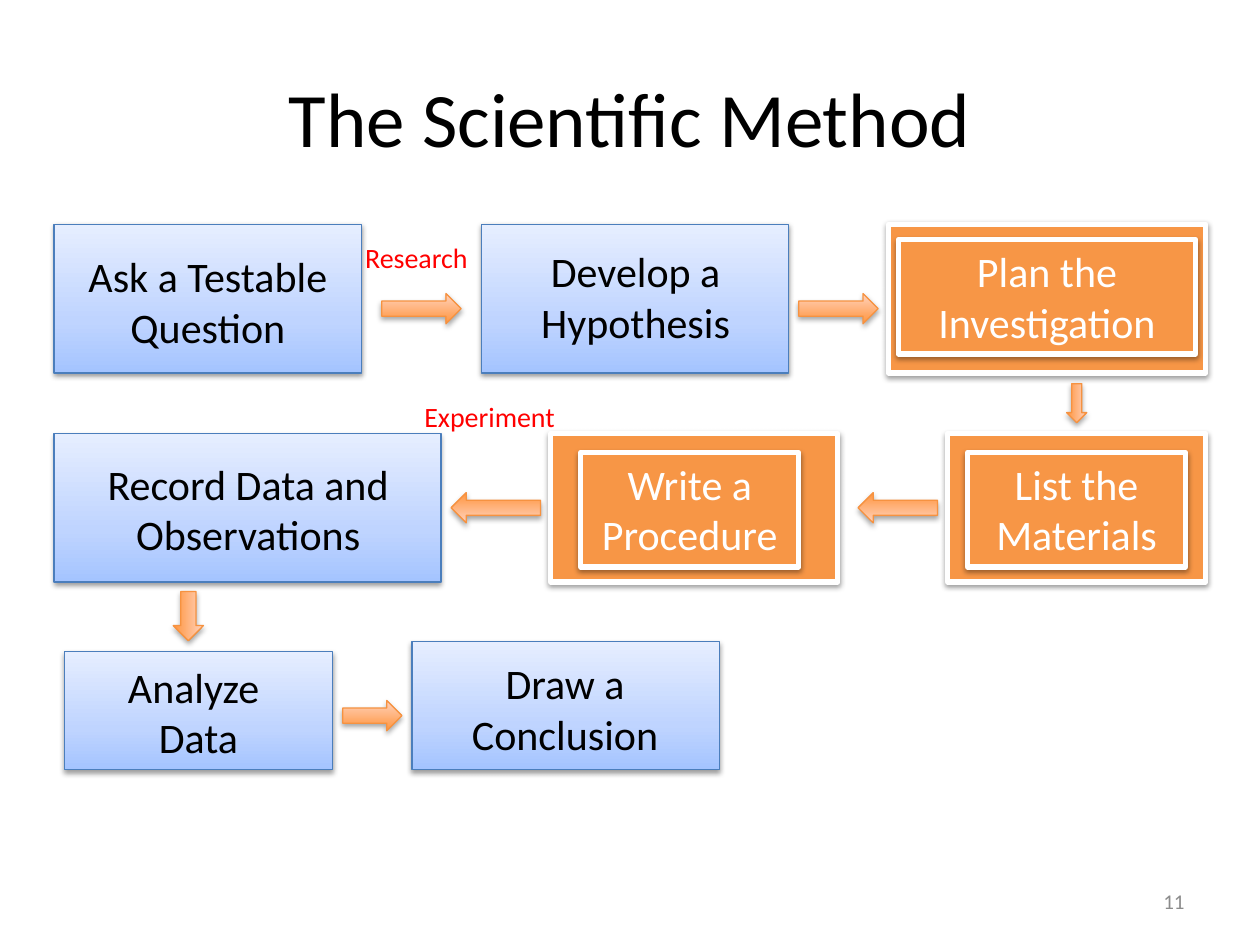
import lxml.etree
import pptx
import pptx.dml.color
import pptx.enum.shapes
import pptx.enum.text
import pptx.oxml.ns
import pptx.util

Inches = pptx.util.Inches
Pt = pptx.util.Pt
qn = pptx.oxml.ns.qn
Kind = pptx.enum.shapes.MSO_SHAPE
Align = pptx.enum.text.PP_ALIGN
Mid = pptx.enum.text.MSO_ANCHOR.MIDDLE
Top = pptx.enum.text.MSO_ANCHOR.TOP

BLUE = [(0, "A4C4FF"), (35, "BFD4FF"), (100, "E6EEFF")]
PEACH = [(0, "FF953E"), (100, "FFD2BD")]
ORANGE = "F79646"


def tint(code):
    return pptx.dml.color.RGBColor.from_string(code)


def node(root, tag, **vals):
    return lxml.etree.SubElement(root, qn(tag), {k: str(v) for k, v in vals.items()})


def style(item, form):
    for key, val in form.items():
        setattr(item, key, val)


class Deck:
    """Holds the style and the current slide, and draws each kind of element."""

    def __init__(self):
        self.show = pptx.Presentation()
        style(self.show, {"slide_width": Inches(10), "slide_height": Inches(7.5)})
        self.slide = self.show.slides.add_slide(self.show.slide_layouts[5])
        self.font = "Calibri"

    def label(self, shape, text, size, color, align=Align.CENTER, anchor=Top):
        frame = shape.text_frame
        style(frame, {"text": text, "word_wrap": True, "vertical_anchor": anchor})
        for para in frame.paragraphs:
            para.alignment = align
            for run in para.runs:
                style(run.font, {"name": self.font, "size": Pt(size)})
                run.font.color.rgb = tint(color)

    def title(self, text, *box):
        shape = self.slide.shapes.title
        style(shape, dict(zip(("left", "top", "width", "height"), map(Inches, box))))
        self.label(shape, text, 44, "000000", anchor=Mid)

    def text(self, text, box, size=24, color="000000", **form):
        shape = self.slide.shapes.add_textbox(*map(Inches, box))
        self.label(shape, text, size, color, **form)

    def shape(self, kind, box, fill, line, width, alpha=38, dist=1.6):
        shape = self.slide.shapes.add_shape(kind, *map(Inches, box))
        if isinstance(fill, str):
            shape.fill.solid()
            shape.fill.fore_color.rgb = tint(fill)
        else:
            self.blend(shape, fill)
        shape.line.color.rgb = tint(line)
        shape.line.width = Pt(width)
        self.shade(shape, alpha, dist)
        return shape

    def blend(self, shape, stops):
        shape.fill.gradient()
        shape.fill.gradient_angle = 90
        root = next(shape._element.spPr.iter(qn("a:gsLst")))
        root.clear()
        for pos, code in stops:
            node(node(root, "a:gs", pos=pos * 1000), "a:srgbClr", val=code)

    def shade(self, shape, alpha, dist):
        shape.shadow.inherit = False
        root = shape._element.spPr.find(qn("a:effectLst"))
        cast = node(root, "a:outerShdw", blurRad=Pt(3.1), dist=Pt(dist),
                    dir=5400000, rotWithShape=0)
        node(node(cast, "a:srgbClr", val="000000"), "a:alpha", val=alpha * 1000)

    def step(self, text, box, area):
        self.shape(Kind.RECTANGLE, box, BLUE, "4B7EBC", 0.75)
        self.text(text, area)

    def plan(self, text, *boxes):
        for box in boxes:
            shape = self.shape(Kind.RECTANGLE, box, ORANGE, "FFFFFF", 3)
        self.label(shape, text, 24, "FFFFFF")

    def arrow(self, box, turn=0):
        shape = self.shape(Kind.RIGHT_ARROW, box, PEACH, "F69240", 0.75, 35, 1.8)
        shape.rotation = turn


def main():
    deck = Deck()
    deck.title("The Scientific Method", 0.5, 0.3, 9, 1.25)
    deck.text("11", (7.17, 6.95, 2.33, 0.4), 12, "8C8C8C", align=Align.RIGHT, anchor=Mid)

    high, tall = 1.18, 0.91
    one, two = 1.78, 3.44
    for text, box, area in (
        ("Ask a Testable Question", (0.43, one, 2.44, high), (0.43, 1.94, 2.44, tall)),
        ("Develop a Hypothesis", (3.82, one, 2.44, high), (4.06, 1.9, 1.97, tall)),
        ("Record Data and Observations", (0.43, two, 3.07, high), (0.59, 3.59, 2.76, tall)),
        ("Analyze \nData", (0.51, 5.17, 2.13, 0.94), (0.51, 5.2, 2.13, tall)),
        ("Draw a Conclusion", (3.27, 5.09, 2.44, 1.02), (3.5, 5.17, 1.97, tall)),
    ):
        deck.step(text, box, area)

    for text, box, area in (
        ("Plan the Investigation", (7.05, one, 2.52, high), (7.13, 1.9, 2.36, tall)),
        ("List the Materials", (7.52, two, 2.05, high), (7.68, 3.59, 1.73, tall)),
        ("Write a Procedure", (4.37, two, 2.28, high), (4.61, 3.59, 1.73, tall)),
    ):
        deck.plan(text, box, area)

    for box, turn in (
        ((3.03, 2.33, 0.63, 0.24), 0),
        ((6.34, 2.33, 0.63, 0.24), 0),
        ((8.39, 3.12, 0.31, 0.16), 90),
        ((6.81, 3.91, 0.63, 0.24), 180),
        ((3.58, 3.91, 0.71, 0.24), 180),
        ((1.3, 4.77, 0.39, 0.24), 90),
        ((2.72, 5.56, 0.47, 0.24), 0),
    ):
        deck.arrow(box, turn)

    for text, box in (
        ("Research", (2.8, 1.86, 1.26, 0.37)),
        ("Experiment", (3.27, 3.12, 1.42, 0.37)),
    ):
        deck.text(text, box, 16, "FF0000", align=Align.LEFT)
    deck.show.save("out.pptx")


if __name__ == "__main__":
    main()
